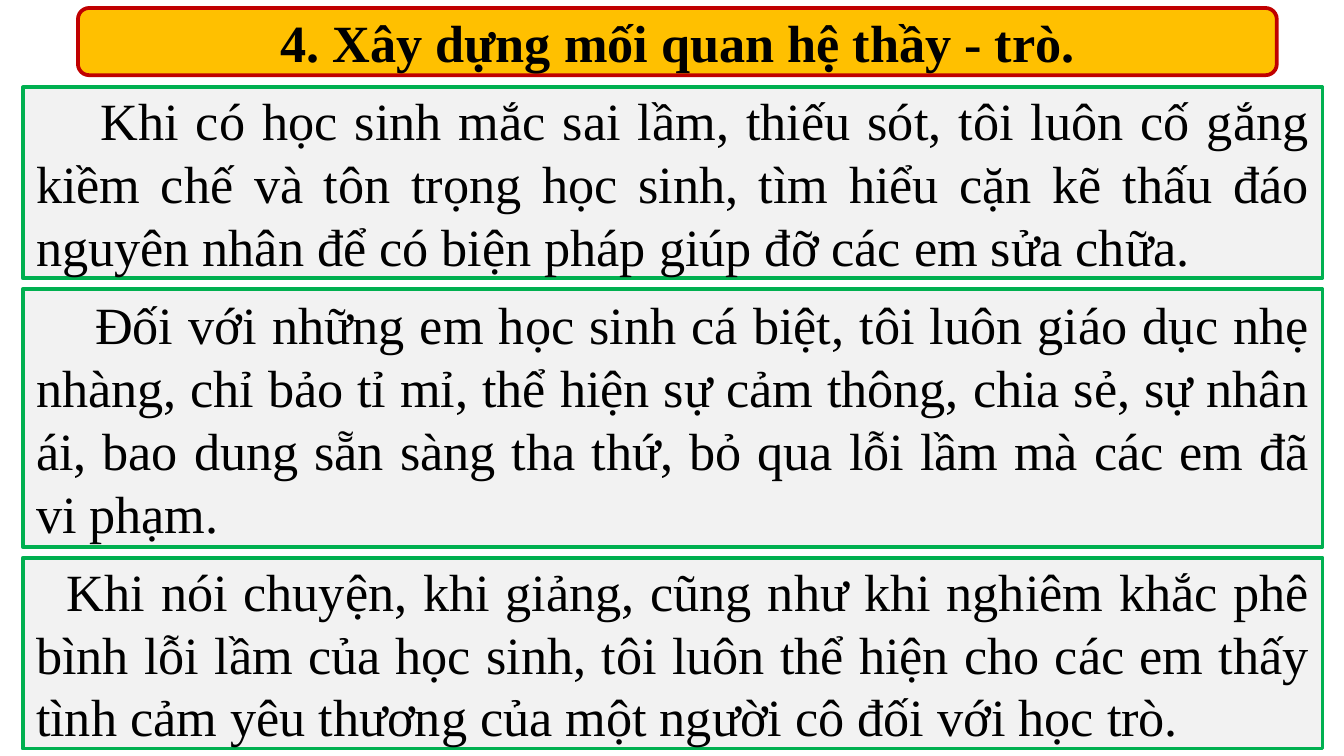
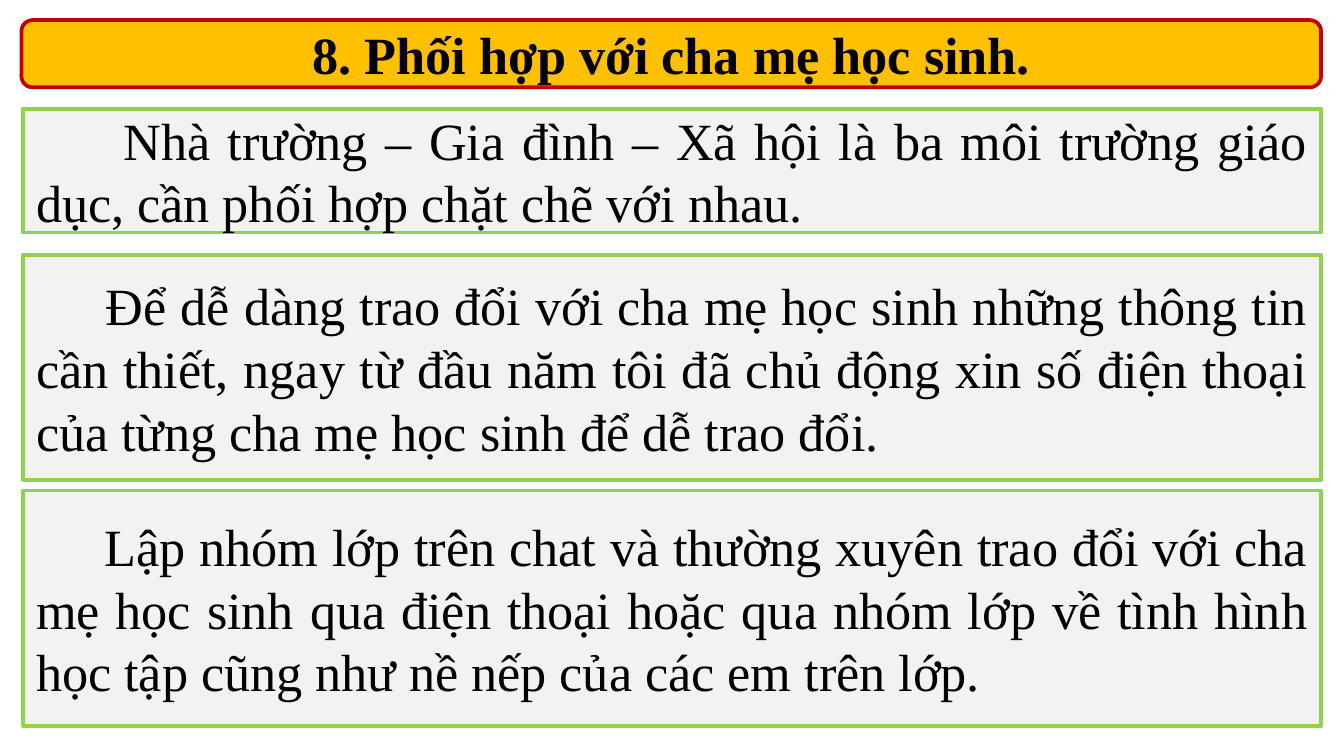
import pptx
import pptx.dml.color
import pptx.enum.shapes
import pptx.enum.text
import pptx.util

# Content: boxes are (gap above, height, first-line indent, space after, text)
SLIDES = [
    {
        "title": "4. Xây dựng mối quan hệ thầy - trò.",
        "title_at": (0.58, 0.06, 8.92),
        "border": "green",
        "box_width": 9.67,
        "boxes": [
            (0.09, 1.42, 0.48, 6,
             "Khi có học sinh mắc sai lầm, thiếu sót, tôi luôn cố gắng kiềm chế và "
             "tôn trọng học sinh, tìm hiểu cặn kẽ thấu đáo nguyên nhân để có biện "
             "pháp giúp đỡ các em sửa chữa."),
            (0.08, 1.92, 0.44, 6,
             "Đối với những em học sinh cá biệt, tôi luôn giáo dục nhẹ nhàng, chỉ "
             "bảo tỉ mỉ, thể hiện sự cảm thông, chia sẻ, sự nhân ái, bao dung sẵn "
             "sàng tha thứ, bỏ qua lỗi lầm mà các em đã vi phạm."),
            (0.08, 1.42, 0.23, 6,
             "Khi nói chuyện, khi giảng, cũng như khi nghiêm khắc phê bình lỗi lầm "
             "của học sinh, tôi luôn thể hiện cho các em thấy tình cảm yêu thương "
             "của một người cô đối với học trò."),
        ],
    },
    {
        "title": "8. Phối hợp với cha mẹ học sinh.",
        "title_at": (0.16, 0.15, 9.67),
        "border": "lime",
        "box_width": 9.66,
        "boxes": [
            (0.16, 0.92, 0.65, 0,
             "Nhà trường – Gia đình – Xã hội là ba môi trường giáo dục, cần phối "
             "hợp chặt chẽ với nhau."),
            (0.17, 1.67, 0.52, 6,
             "Để dễ dàng trao đổi với cha mẹ học sinh những thông tin cần thiết, "
             "ngay từ đầu năm tôi đã chủ động xin số điện thoại của từng cha mẹ "
             "học sinh để dễ trao đổi."),
            (0.08, 1.75, 0.51, 6,
             "Lập nhóm lớp trên chat và thường xuyên trao đổi với cha mẹ học sinh "
             "qua điện thoại hoặc qua nhóm lớp về tình hình học tập cũng như nề "
             "nếp của các em trên lớp."),
        ],
    },
]

# Shared style
COLORS = {"black": "000000", "amber": "FFC000", "red": "C00000",
          "grey": "F2F2F2", "green": "00B050", "lime": "92D050"}
FONT, TEXT_SIZE, LINE_WIDTH = "Times New Roman", 28, 2
SLIDE_W = 10
SLIDE_H = SLIDE_W * 9 / 16
TITLE_H, BOX_LEFT = 0.5, 0.17
SHAPE = pptx.enum.shapes.MSO_SHAPE
ALIGN = pptx.enum.text.PP_ALIGN


def rgb(name):
    return pptx.dml.color.RGBColor.from_string(COLORS[name])


def add_panel(slide, kind, at, fill, border, text, align,
              bold=False, indent=0, space_after=6):
    sp = slide.shapes.add_shape(kind, *(pptx.util.Inches(v) for v in at))
    sp.shadow.inherit = False
    sp.fill.solid()
    sp.fill.fore_color.rgb = rgb(fill)
    sp.line.color.rgb = rgb(border)
    sp.line.width = pptx.util.Pt(LINE_WIDTH)
    tf = sp.text_frame
    tf.word_wrap = True
    tf.vertical_anchor = pptx.enum.text.MSO_ANCHOR.MIDDLE
    p = tf.paragraphs[0]
    p.alignment = align
    p.space_after = pptx.util.Pt(space_after)
    if indent:
        pPr = p._p.get_or_add_pPr()
        pPr.set("marL", "0")
        pPr.set("indent", str(int(pptx.util.Inches(indent))))
    r = p.add_run()
    r.text = text
    r.font.name = FONT
    r.font.size = pptx.util.Pt(TEXT_SIZE)
    r.font.bold = bold
    r.font.color.rgb = rgb("black")


def build_slide(prs, data):
    slide = prs.slides.add_slide(prs.slide_layouts[6])
    # Title band
    left, top, width = data["title_at"]
    add_panel(slide, SHAPE.FLOWCHART_ALTERNATE_PROCESS,
              (left, top, width, TITLE_H), "amber", "red",
              data["title"], ALIGN.CENTER, bold=True)
    # Text boxes stacked below the band
    y = top + TITLE_H
    for gap, height, indent, space_after, text in data["boxes"]:
        y += gap
        add_panel(slide, SHAPE.RECTANGLE,
                  (BOX_LEFT, y, data["box_width"], height), "grey",
                  data["border"], text, ALIGN.JUSTIFY,
                  indent=indent, space_after=space_after)
        y += height


def main():
    prs = pptx.Presentation()
    prs.slide_width = pptx.util.Inches(SLIDE_W)
    prs.slide_height = pptx.util.Inches(SLIDE_H)
    for data in SLIDES:
        build_slide(prs, data)
    prs.save("out.pptx")


if __name__ == "__main__":
    main()
